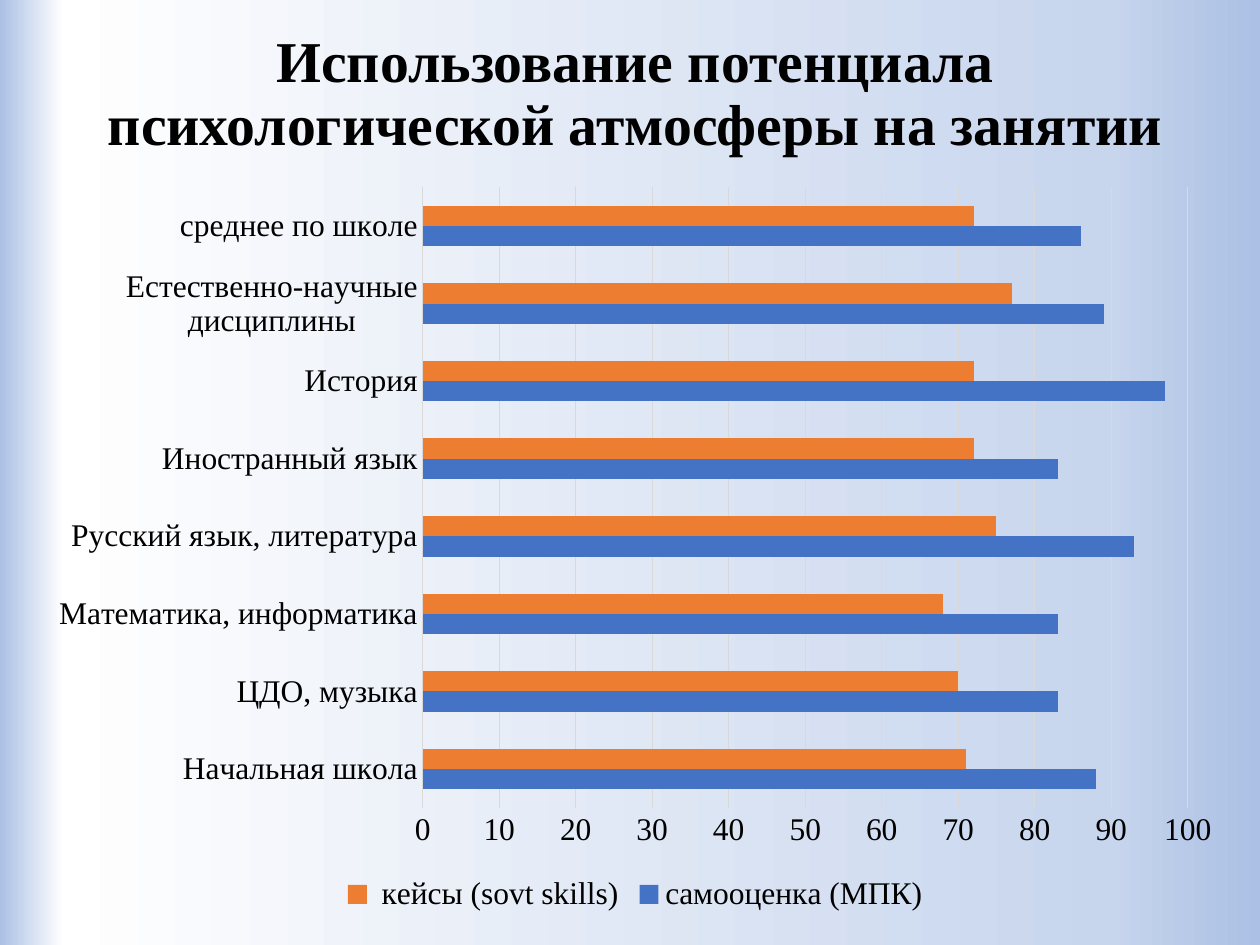
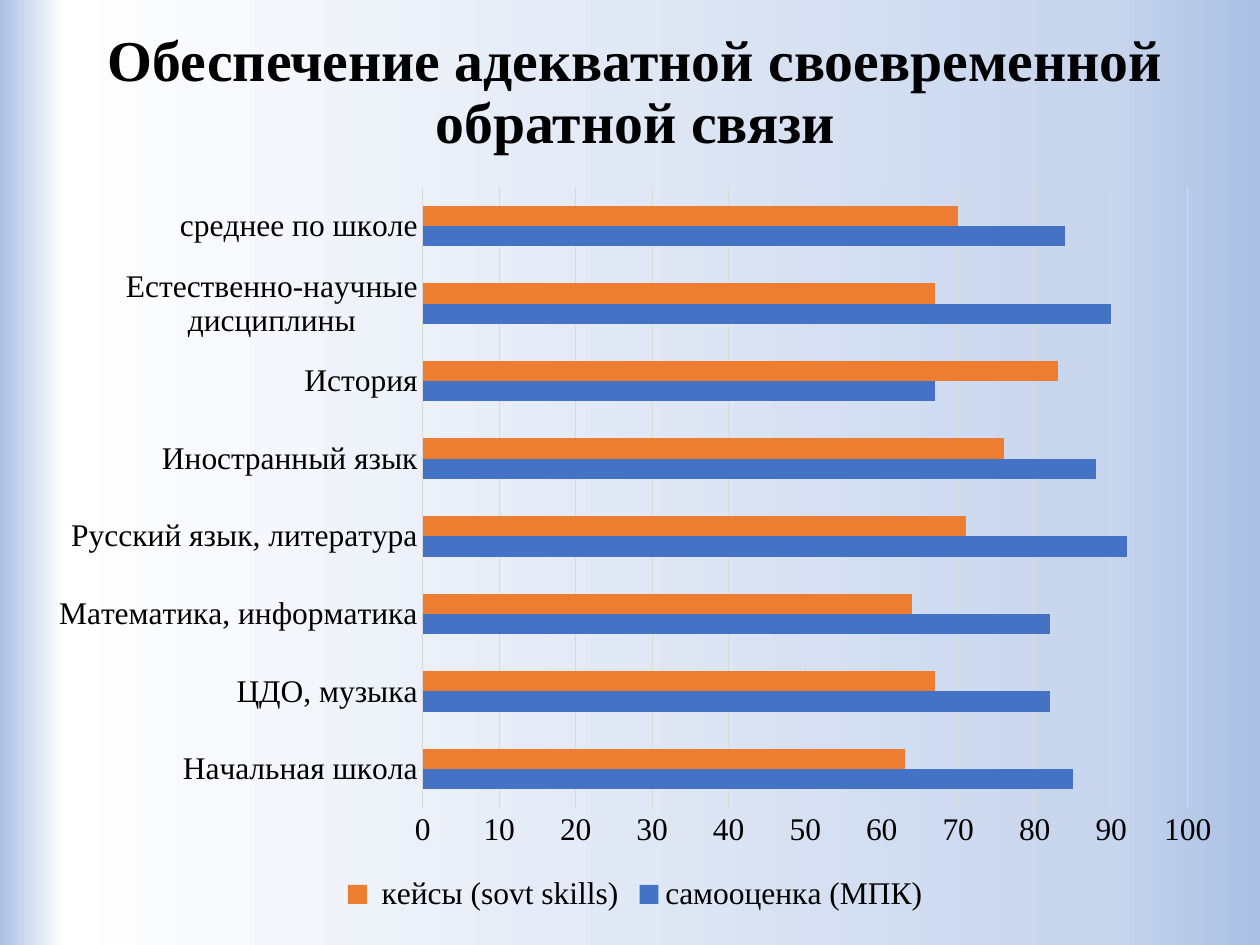
from copy import deepcopy
from dataclasses import dataclass

from pptx import Presentation
from pptx.chart.data import CategoryChartData
from pptx.dml.color import RGBColor
from pptx.enum.chart import XL_CHART_TYPE, XL_LEGEND_POSITION, XL_TICK_MARK
from pptx.enum.text import MSO_ANCHOR, MSO_AUTO_SIZE, PP_ALIGN
from pptx.util import Pt


@dataclass(frozen=True)
class Theme:
    """Colours, type sizes and shared measures in points."""
    font: str = "Times New Roman"
    ink: str = "000000"
    grid: str = "D9D9D9"
    self_rating: str = "4472C4"
    case_score: str = "ED7D31"
    backdrop: tuple = ((0, "ABC0E4"), (0.12, "C7D5ED"), (0.95, "FFFFFF"), (1, "ABC0E4"))
    title_size: float = 33
    chart_size: float = 18
    hairline: float = 0.75
    left: float = 20
    width: float = 686
    chart_top: float = 98.5
    chart_height: float = 426


THEME = Theme()
SUBJECTS = (
    "Начальная школа", "ЦДО, музыка", "Математика, информатика",
    "Русский язык, литература", "Иностранный язык", "История",
    "Естественно-научные дисциплины", "среднее по школе",
)
RATINGS = (("самооценка (МПК)", THEME.self_rating), (" кейсы (sovt skills)", THEME.case_score))
SLIDES = (
    {
        "title": "Использование потенциала психологической атмосферы на занятии",
        "title_top": 15, "title_height": 79,
        "scores": ((88, 83, 83, 93, 83, 97, 89, 86), (71, 70, 68, 75, 72, 72, 77, 72)),
    },
    {
        "title": "Обеспечение адекватной своевременной обратной связи",
        "title_top": 1.5, "title_height": 104.5,
        "scores": ((85, 82, 82, 92, 88, 67, 90, 84), (63, 67, 64, 71, 76, 83, 67, 70)),
    },
)


def apply(target, values):
    """Set each attribute of the target from a dict."""
    for name, value in values.items():
        setattr(target, name, value)


def style_font(font, size, bold=False):
    """Give a font the shared face and ink."""
    apply(font, {"name": THEME.font, "size": Pt(size), "bold": bold})
    font.color.rgb = RGBColor.from_string(THEME.ink)


def style_line(line):
    """Make a line a pale hairline."""
    line.width = Pt(THEME.hairline)
    line.color.rgb = RGBColor.from_string(THEME.grid)


def paint_backdrop(master):
    """Fill the master background with the shared gradient."""
    fill = master.background.fill
    fill.gradient()
    fill.gradient_angle = 180
    stop_list = master.element.xpath(".//p:bgPr//a:gsLst")[0]
    for _ in range(len(THEME.backdrop) - len(stop_list)):
        stop_list.append(deepcopy(stop_list[-1]))
    for stop, (position, colour) in zip(fill.gradient_stops, THEME.backdrop):
        stop.position = position
        stop.color.rgb = RGBColor.from_string(colour)


def set_title(slide, wording, top, height):
    """Place and format the slide title."""
    title = slide.shapes.title
    apply(title, {"left": Pt(THEME.left), "top": Pt(top),
                  "width": Pt(THEME.width), "height": Pt(height)})
    apply(title.text_frame, {"text": wording, "word_wrap": True,
                             "auto_size": MSO_AUTO_SIZE.NONE,
                             "vertical_anchor": MSO_ANCHOR.MIDDLE})
    paragraph = title.text_frame.paragraphs[0]
    apply(paragraph, {"alignment": PP_ALIGN.CENTER, "line_spacing": 0.9})
    style_font(paragraph.runs[0].font, THEME.title_size, bold=True)


def style_axes(chart):
    """Format the subject axis and the score axis."""
    subjects, scores = chart.category_axis, chart.value_axis
    for axis in (subjects, scores):
        apply(axis, {"major_tick_mark": XL_TICK_MARK.NONE, "minor_tick_mark": XL_TICK_MARK.NONE})
        style_font(axis.tick_labels.font, THEME.chart_size)
    subjects.has_major_gridlines = False
    style_line(subjects.format.line)
    apply(scores, {"minimum_scale": 0, "maximum_scale": 100, "major_unit": 10,
                   "has_major_gridlines": True})
    style_line(scores.major_gridlines.format.line)
    scores.format.line.fill.background()


def add_rating_chart(slide, scores):
    """Add the bar chart of both ratings by subject."""
    ratings = CategoryChartData(number_format="0")
    ratings.categories = SUBJECTS
    for (name, _), values in zip(RATINGS, scores):
        ratings.add_series(name, values)
    chart = slide.shapes.add_chart(
        XL_CHART_TYPE.BAR_CLUSTERED, Pt(THEME.left), Pt(THEME.chart_top),
        Pt(THEME.width), Pt(THEME.chart_height), ratings).chart
    apply(chart, {"has_title": False, "has_legend": True})
    style_font(chart.font, THEME.chart_size)
    apply(chart.legend, {"position": XL_LEGEND_POSITION.BOTTOM, "include_in_layout": False})
    style_font(chart.legend.font, THEME.chart_size)
    style_axes(chart)
    plot = chart.plots[0]
    apply(plot, {"gap_width": 182, "vary_by_categories": False})
    for series, (_, colour) in zip(plot.series, RATINGS):
        series.format.fill.solid()
        series.format.fill.fore_color.rgb = RGBColor.from_string(colour)


def main():
    """Build the deck and save it."""
    deck = Presentation()
    apply(deck, {"slide_width": Pt(720), "slide_height": Pt(540)})
    paint_backdrop(deck.slide_master)
    title_only = deck.slide_layouts.get_by_name("Title Only")
    for content in SLIDES:
        slide = deck.slides.add_slide(title_only)
        set_title(slide, content["title"], content["title_top"], content["title_height"])
        add_rating_chart(slide, content["scores"])
    deck.save("out.pptx")


if __name__ == "__main__":
    main()
